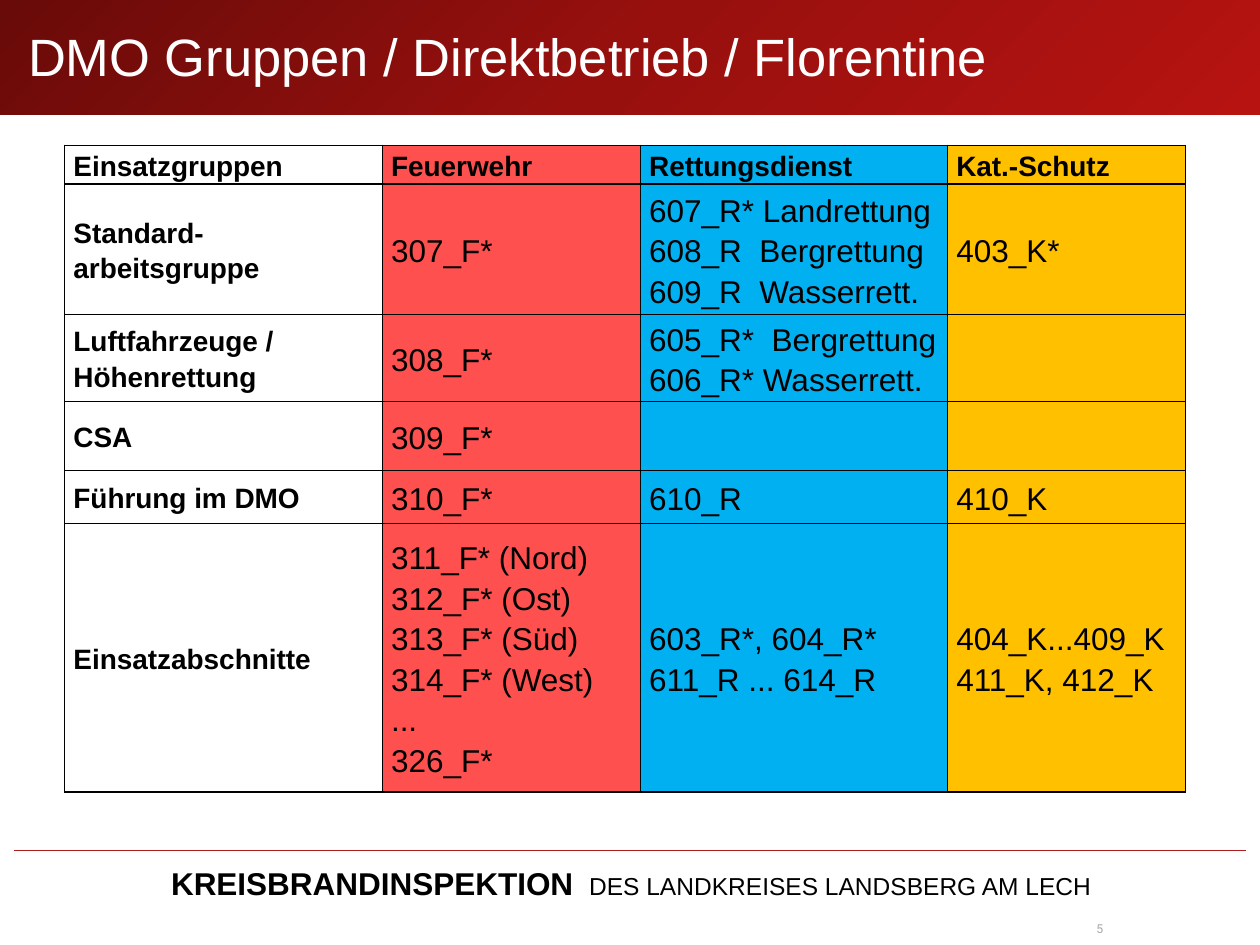
from dataclasses import dataclass
from copy import deepcopy

from lxml.etree import SubElement
from pptx import Presentation
from pptx.dml.color import RGBColor
from pptx.enum.shapes import MSO_CONNECTOR as Connector, MSO_SHAPE as Shape
from pptx.enum.text import MSO_ANCHOR as Anchor, PP_ALIGN as Align
from pptx.oxml.ns import qn
from pptx.util import Pt


@dataclass(frozen=True)
class Theme:
    font: str = "Arial"
    number_font: str = "Roboto"
    black: str = "000000"
    white: str = "FFFFFF"
    grey: str = "A7A7A7"
    rule: str = "AC1E1C"
    banner: tuple = ("690B09", "98100E", "B61311")
    columns: tuple = (None, "FF5050", "00B0F0", "FFC000")
    title: int = 30
    entry: int = 18
    label: int = 16
    footer: int = 14
    number: int = 7


T = Theme()

COL_WIDTHS = (181.5, 147.5, 175.5, 136)
ROW_HEIGHTS = (20.2, 61.2, 41, 39.6, 30.2, 153.4)
GROUPS = (
    ("Einsatzgruppen", "Feuerwehr", "Rettungsdienst", "Kat.-Schutz"),
    ("Standard-\narbeitsgruppe", "307_F*",
     "607_R* Landrettung\n608_R  Bergrettung\n609_R  Wasserrett.", "403_K*"),
    ("Luftfahrzeuge / Höhenrettung", "308_F*",
     "605_R*  Bergrettung\n606_R* Wasserrett.", ""),
    ("CSA", "309_F*", "", ""),
    ("Führung im DMO", "310_F*", "610_R", "410_K"),
    ("Einsatzabschnitte",
     "311_F* (Nord)\n312_F* (Ost)\n313_F* (Süd)\n314_F* (West)\n...\n326_F*",
     "603_R*, 604_R*\n611_R ... 614_R", "404_K...409_K\n411_K, 412_K"),
)


def rgb(value):
    return RGBColor.from_string(value)


def add_text(p, text, size=T.entry, color=T.black, bold=False, font=T.font):
    for i, line in enumerate(text.split("\n")):
        if i:
            p.add_line_break()
        r = p.add_run()
        r.text = line
        r.font.name, r.font.size, r.font.bold = font, Pt(size), bold
        r.font.color.rgb = rgb(color)


def add_box(s, left, top, width, height, inset=3, anchor=Anchor.TOP, wrap=True):
    tf = s.shapes.add_textbox(Pt(left), Pt(top), Pt(width), Pt(height)).text_frame
    tf.word_wrap, tf.vertical_anchor = wrap, anchor
    tf.margin_left = tf.margin_right = tf.margin_top = tf.margin_bottom = Pt(inset)
    return tf.paragraphs[0]


def add_banner(s):
    sp = s.shapes.add_shape(Shape.RECTANGLE, 0, 0, Pt(720), Pt(65.5))
    sp.shadow.inherit = False
    sp.line.fill.background()
    sp.fill.gradient()
    sp.fill.gradient_angle = 315
    stops = sp.fill.gradient_stops
    first = sp.fill._fill._gradFill.find(qn("a:gsLst"))[0]
    first.addnext(deepcopy(first))
    stops = sp.fill.gradient_stops
    for stop, color, position in zip(stops, T.banner, (0, 0.5, 1)):
        stop.color.rgb = rgb(color)
        stop.position = position


def add_rule(s, left, right, y):
    line = s.shapes.add_connector(Connector.STRAIGHT, Pt(left), Pt(y), Pt(right), Pt(y))
    line.line.color.rgb = rgb(T.rule)
    line.line.width = Pt(1)
    SubElement(line._element.spPr, qn("a:effectLst"))


def add_borders(cell):
    props = cell._tc.get_or_add_tcPr()
    for side in ("lnL", "lnR", "lnT", "lnB"):
        ln = SubElement(props, qn(f"a:{side}"), w=str(Pt(1)))
        SubElement(SubElement(ln, qn("a:solidFill")), qn("a:srgbClr"), val=T.black)


def fill_cell(cell, text, color, heading):
    cell.vertical_anchor = Anchor.MIDDLE
    cell.margin_left = cell.margin_right = Pt(5)
    cell.margin_top = cell.margin_bottom = 0
    add_borders(cell)
    if color:
        cell.fill.solid()
        cell.fill.fore_color.rgb = rgb(color)
    else:
        cell.fill.background()
    if text:
        p = cell.text_frame.paragraphs[0]
        p.line_spacing, p.space_after = 1.15, Pt(6)
        add_text(p, text, size=T.label if heading else T.entry, bold=heading)


def add_groups(s, left, top):
    table = s.shapes.add_table(
        len(GROUPS), len(COL_WIDTHS), Pt(left), Pt(top),
        Pt(sum(COL_WIDTHS)), Pt(sum(ROW_HEIGHTS))).table
    for col, width in zip(table.columns, COL_WIDTHS):
        col.width = Pt(width)
    for row, height in zip(table.rows, ROW_HEIGHTS):
        row.height = Pt(height)
    for i, texts in enumerate(GROUPS):
        for j, (text, color) in enumerate(zip(texts, T.columns)):
            fill_cell(table.cell(i, j), text, color, heading=i == 0 or j == 0)


def main():
    prs = Presentation()
    prs.slide_width, prs.slide_height = Pt(720), Pt(540)
    s = prs.slides.add_slide(prs.slide_layouts[6])
    add_banner(s)
    add_rule(s, 8, 712, 486)

    p = add_box(s, 36, 490.5, 649.5, 26.5)
    p.alignment = Align.CENTER
    add_text(p, "KREISBRANDINSPEKTION", bold=True)
    add_text(p, "  ", size=T.label, bold=True)
    add_text(p, "DES LANDKREISES LANDSBERG AM LECH", size=T.footer)

    p = add_box(s, 626.5, 526.5, 13.5, 8.5, inset=0, wrap=False)
    add_text(p, "5", size=T.number, color=T.grey, font=T.number_font)

    p = add_box(s, 13, 0, 694, 68.5, anchor=Anchor.MIDDLE)
    p.line_spacing = 0.9
    add_text(p, "DMO Gruppen / Direktbetrieb / Florentine", size=T.title, color=T.white)

    add_groups(s, 37, 83)
    prs.save("out.pptx")


if __name__ == "__main__":
    main()
